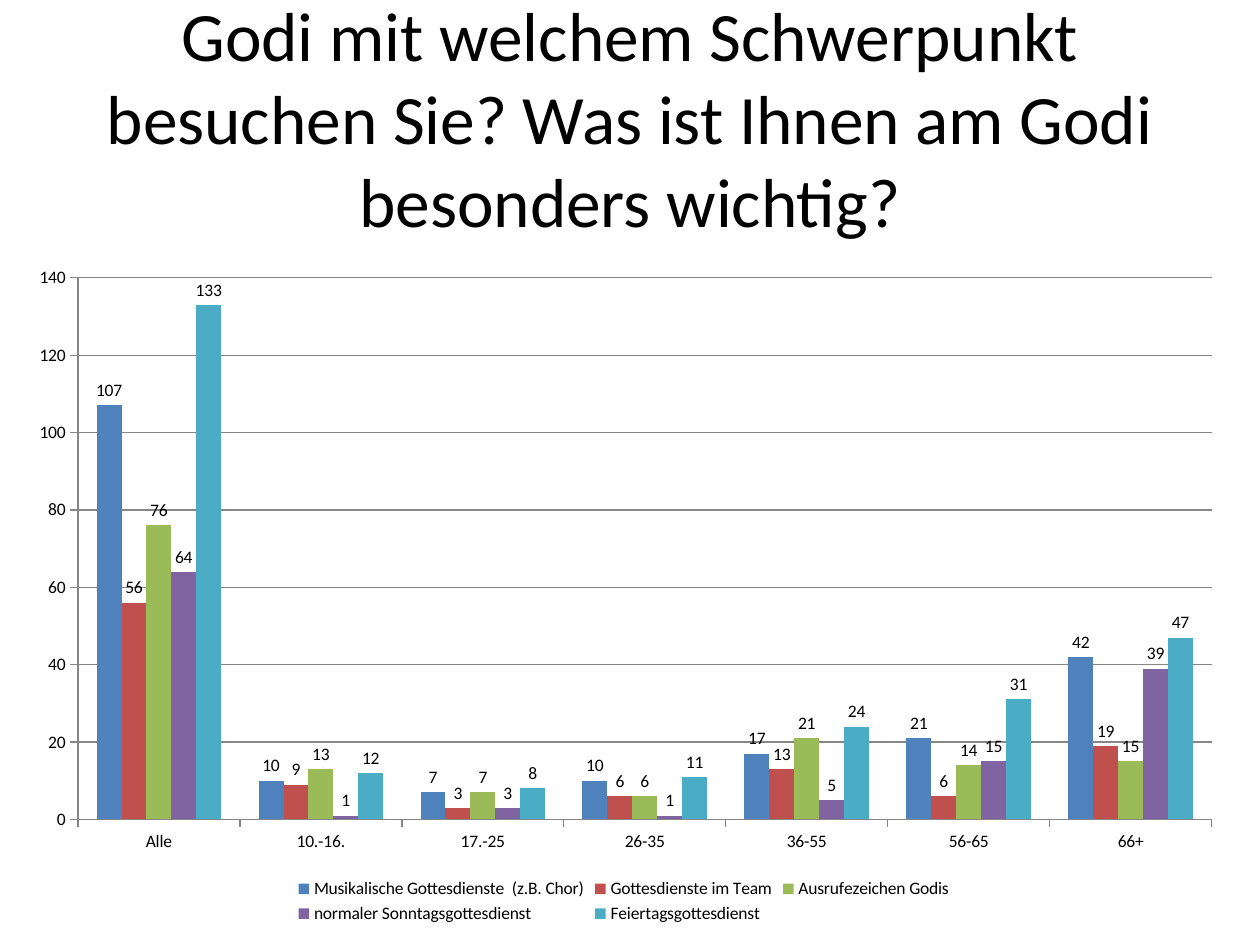
from dataclasses import dataclass

from pptx import Presentation
from pptx.chart.data import CategoryChartData
from pptx.dml.color import RGBColor
from pptx.enum.chart import XL_CHART_TYPE, XL_LABEL_POSITION, XL_LEGEND_POSITION, XL_TICK_MARK
from pptx.enum.text import MSO_ANCHOR, PP_ALIGN
from pptx.util import Inches, Pt


@dataclass(frozen=True)
class Theme:
    font: str = "Calibri"
    title_size: float = 39.6
    chart_size: float = 10
    line_width: float = 0.75
    text: RGBColor = RGBColor(0x00, 0x00, 0x00)
    line: RGBColor = RGBColor(0x86, 0x86, 0x86)


THEME = Theme()

TITLE = "Godi mit welchem Schwerpunkt besuchen Sie? Was ist Ihnen am Godi besonders wichtig?"
AGE_GROUPS = ["Alle", "10.-16.", "17.-25", "26-35", "36-55", "56-65", "66+"]
# Kind of service, bar colour, answers per age group
SERVICES = [
    ("Musikalische Gottesdienste  (z.B. Chor)", "4F81BD", [107, 10, 7, 10, 17, 21, 42]),
    ("Gottesdienste im Team", "C0504D", [56, 9, 3, 6, 13, 6, 19]),
    ("Ausrufezeichen Godis ", "9BBB59", [76, 13, 7, 6, 21, 14, 15]),
    ("normaler Sonntagsgottesdienst", "8064A2", [64, 1, 3, 1, 5, 15, 39]),
    ("Feiertagsgottesdienst", "4BACC6", [133, 12, 8, 11, 24, 31, 47]),
]


def style_font(font, size):
    font.name = THEME.font
    font.size = Pt(size)
    font.color.rgb = THEME.text


def style_line(line):
    line.color.rgb = THEME.line
    line.width = Pt(THEME.line_width)


def add_title(slide, left, top, width, height):
    shape = slide.shapes.add_textbox(left, top, width, height)
    text_frame = shape.text_frame
    text_frame.word_wrap = True
    text_frame.vertical_anchor = MSO_ANCHOR.MIDDLE
    paragraph = text_frame.paragraphs[0]
    paragraph.alignment = PP_ALIGN.CENTER
    run = paragraph.add_run()
    run.text = TITLE
    style_font(run.font, THEME.title_size)


def add_service_chart(slide, left, top, width, height):
    chart_data = CategoryChartData()
    chart_data.categories = AGE_GROUPS
    for name, _, values in SERVICES:
        chart_data.add_series(name, values)
    chart = slide.shapes.add_chart(
        XL_CHART_TYPE.COLUMN_CLUSTERED, left, top, width, height, chart_data
    ).chart
    chart.has_title = False
    style_font(chart.font, THEME.chart_size)

    # Legend
    chart.has_legend = True
    chart.legend.position = XL_LEGEND_POSITION.BOTTOM
    chart.legend.include_in_layout = False

    # Axes
    for axis in (chart.category_axis, chart.value_axis):
        axis.major_tick_mark = XL_TICK_MARK.OUTSIDE
        axis.minor_tick_mark = XL_TICK_MARK.NONE
        style_line(axis.format.line)
    value_axis = chart.value_axis
    value_axis.minimum_scale = 0
    value_axis.maximum_scale = 140
    value_axis.major_unit = 20
    value_axis.has_major_gridlines = True
    style_line(value_axis.major_gridlines.format.line)

    # Bars and value labels
    plot = chart.plots[0]
    plot.gap_width = 150
    plot.overlap = 0
    plot.vary_by_categories = False
    for series, (_, color, _) in zip(plot.series, SERVICES):
        series.format.fill.solid()
        series.format.fill.fore_color.rgb = RGBColor.from_string(color)
        series.invert_if_negative = False
        labels = series.data_labels
        labels.show_value = True
        labels.position = XL_LABEL_POSITION.OUTSIDE_END
        style_font(labels.font, THEME.chart_size)


def main():
    presentation = Presentation()
    presentation.slide_width = Inches(10)
    presentation.slide_height = Inches(7.5)
    slide = presentation.slides.add_slide(presentation.slide_layouts[6])
    add_title(slide, Inches(0.5), Inches(0.3), Inches(9), Inches(1.25))
    add_service_chart(slide, Inches(0.12), Inches(2.02), Inches(9.69), Inches(5.35))
    presentation.save("out.pptx")


if __name__ == "__main__":
    main()
